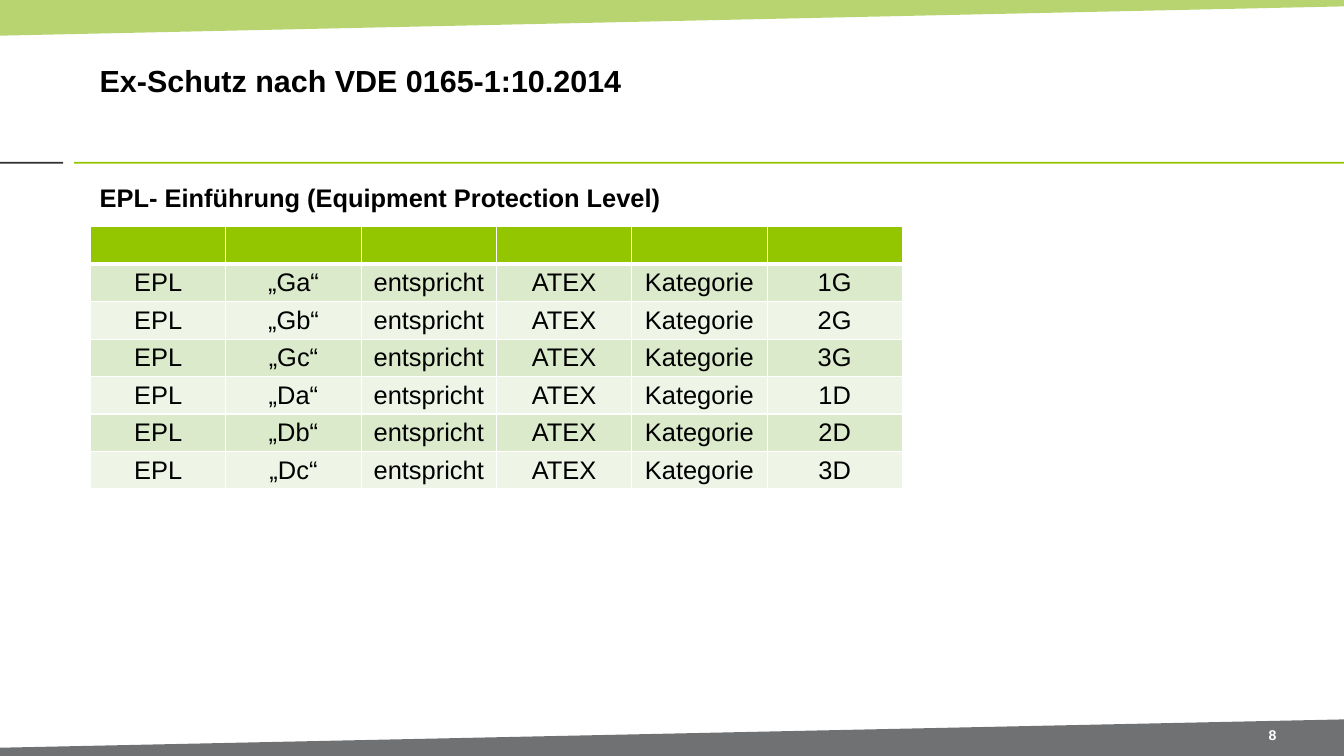
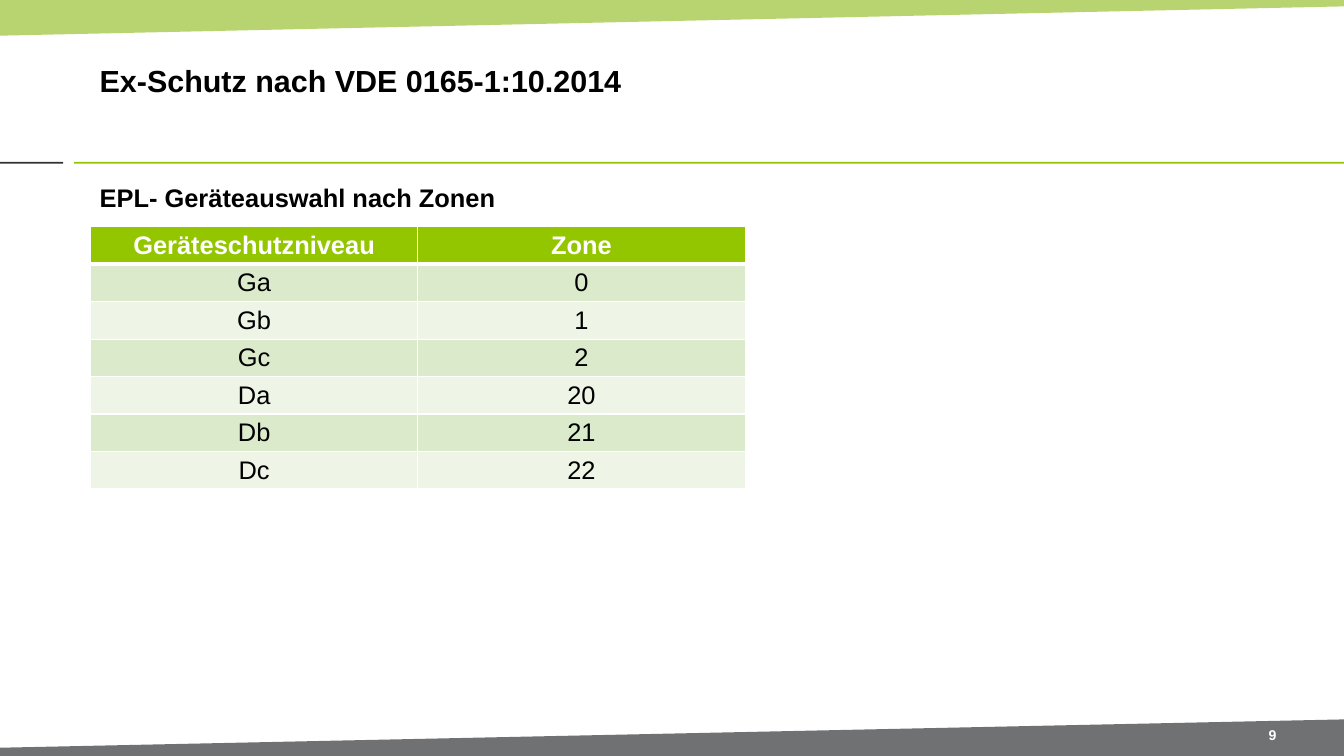
import pptx
import pptx.dml.color
import pptx.enum.shapes
import pptx.enum.text
import pptx.oxml
import pptx.oxml.ns
import pptx.util
from pptx.util import Inches

WIDTH, HEIGHT = 14.7, 8.27
LEFT, TEXT_WIDTH = 0.98, 13.11
COLORS = {"accent": "94C600", "top": "95C02A", "bottom": "707173", "dark": "313130",
          "text": "000000", "white": "FFFFFF", "rows": ["DCEACC", "EEF5E7"]}
INSETS = {"margin_left": 0.11, "margin_right": 0.11, "margin_top": 0.06, "margin_bottom": 0.06}
ANCHOR = pptx.enum.text.MSO_ANCHOR
ALIGN = pptx.enum.text.PP_ALIGN


def rgb(value):
    """Turn a hex string into a colour."""
    return pptx.dml.color.RGBColor.from_string(value)


class Deck:
    """Holds the presentation, its style and the current slide."""

    def __init__(self):
        """Start an empty presentation of the right size."""
        self.prs = pptx.Presentation()
        self.prs.slide_width, self.prs.slide_height = Inches(WIDTH), Inches(HEIGHT)

    def slide(self, title, subtitle, number):
        """Add a slide with its bands, rules, title, subtitle and page number."""
        self.s = self.prs.slides.add_slide(self.prs.slide_layouts.get_by_name("Title Only"))
        self.band([(0, 0), (WIDTH, 0), (WIDTH, 0.07), (0, 0.39)], COLORS["top"], 67)
        self.rule(0, 0.69, COLORS["dark"])
        self.rule(0.81, WIDTH - 0.81, COLORS["accent"])
        self.band([(WIDTH, HEIGHT), (0, HEIGHT), (0, 8.18), (WIDTH, 7.87)], COLORS["bottom"])
        self.text(self.s.shapes.title, (LEFT, 0.28, TEXT_WIDTH, 1.19), title, 24)
        self.text(None, (LEFT, 1.93, TEXT_WIDTH, 0.5), subtitle, 20, anchor=ANCHOR.TOP)
        self.text(None, (13.49, 7.89, 0.86, 0.29), str(number), 11.1, COLORS["white"], ALIGN.CENTER)

    def paint(self, shape, color):
        """Give a shape a plain fill without line or shadow."""
        shape.shadow.inherit = False
        shape.fill.solid()
        shape.fill.fore_color.rgb = rgb(color)
        shape.line.fill.background()

    def band(self, points, color, opacity=100):
        """Draw a slanted band through the points."""
        points = [(Inches(x), Inches(y)) for x, y in points]
        builder = self.s.shapes.build_freeform(*points[0])
        builder.add_line_segments(points[1:], close=True)
        shape = builder.convert_to_shape()
        self.paint(shape, color)
        if opacity < 100:
            clr = shape.element.spPr.find(".//" + pptx.oxml.ns.qn("a:srgbClr"))
            clr.append(pptx.oxml.parse_xml(
                f'<a:alpha {pptx.oxml.ns.nsdecls("a")} val="{opacity * 1000}"/>'))

    def rule(self, left, width, color):
        """Draw a thin bar under the title."""
        rect = pptx.enum.shapes.MSO_SHAPE.RECTANGLE
        self.paint(self.s.shapes.add_shape(
            rect, Inches(left), Inches(1.77), Inches(width), Inches(0.02)), color)

    def run(self, p, text, size, color, bold, align):
        """Put one formatted run into a paragraph."""
        p.alignment = align
        r = p.add_run()
        r.text = text
        formats = {"name": "Arial", "size": pptx.util.Pt(size), "bold": bold}
        for name, value in formats.items():
            setattr(r.font, name, value)
        r.font.color.rgb = rgb(color)

    def text(self, sp, box, text, size, color=COLORS["text"], align=ALIGN.LEFT, anchor=ANCHOR.MIDDLE):
        """Fill a placeholder, or a new text box, with one bold line."""
        box = [Inches(v) for v in box]
        sp = sp or self.s.shapes.add_textbox(*box)
        sp.left, sp.top, sp.width, sp.height = box
        tf = sp.text_frame
        formats = {"word_wrap": True, "auto_size": pptx.enum.text.MSO_AUTO_SIZE.NONE,
                   "vertical_anchor": anchor}
        formats.update({name: Inches(v) for name, v in INSETS.items()})
        for name, value in formats.items():
            setattr(tf, name, value)
        self.run(tf.paragraphs[0], text, size, color, True, align)

    def borders(self, cell, widths):
        """Set white cell borders, with widths by side in points."""
        for side, width in widths.items():
            cell._tc.get_or_add_tcPr().append(pptx.oxml.parse_xml(
                f'<a:ln{side} {pptx.oxml.ns.nsdecls("a")} w="{int(pptx.util.Pt(width))}"><a:solidFill>'
                f'<a:srgbClr val="{COLORS["white"]}"/></a:solidFill></a:ln{side}>'))

    def table(self, rows, col_width, row_height=0.41):
        """Add a banded table whose first row is the header."""
        cols = len(rows[0])
        table = self.s.shapes.add_table(
            len(rows), cols, Inches(LEFT + 0.01), Inches(2.48),
            Inches(col_width * cols), Inches(row_height * len(rows))).table
        for i, row in enumerate(rows):
            header = i == 0
            fill = COLORS["accent"] if header else COLORS["rows"][(i - 1) % 2]
            color = COLORS["white"] if header else COLORS["text"]
            for j, text in enumerate(row):
                cell = table.cell(i, j)
                self.borders(cell, {"L": 1, "R": 1, "T": 3 if i == 1 else 1, "B": 3 if header else 1})
                cell.fill.solid()
                cell.fill.fore_color.rgb = rgb(fill)
                cell.vertical_anchor = ANCHOR.MIDDLE
                cell.margin_top = cell.margin_bottom = Inches(0.04)
                if text:
                    self.run(cell.text_frame.paragraphs[0], text, 20, color, header, ALIGN.CENTER)


def main():
    """Build both slides and save them."""
    deck = Deck()
    title = "Ex-Schutz nach VDE 0165-1:10.2014"
    levels = ["Ga", "Gb", "Gc", "Da", "Db", "Dc"]
    categories = ["1G", "2G", "3G", "1D", "2D", "3D"]
    zones = ["0", "1", "2", "20", "21", "22"]

    deck.slide(title, "EPL- Einführung (Equipment Protection Level)", 8)
    deck.table([[""] * 6] + [["EPL", f"„{level}“", "entspricht", "ATEX", "Kategorie", category]
                             for level, category in zip(levels, categories)], 1.48)

    deck.slide(title, "EPL- Geräteauswahl nach Zonen", 9)
    deck.table([("Geräteschutzniveau", "Zone"), *zip(levels, zones)], 3.58)

    deck.prs.save("out.pptx")


if __name__ == "__main__":
    main()
